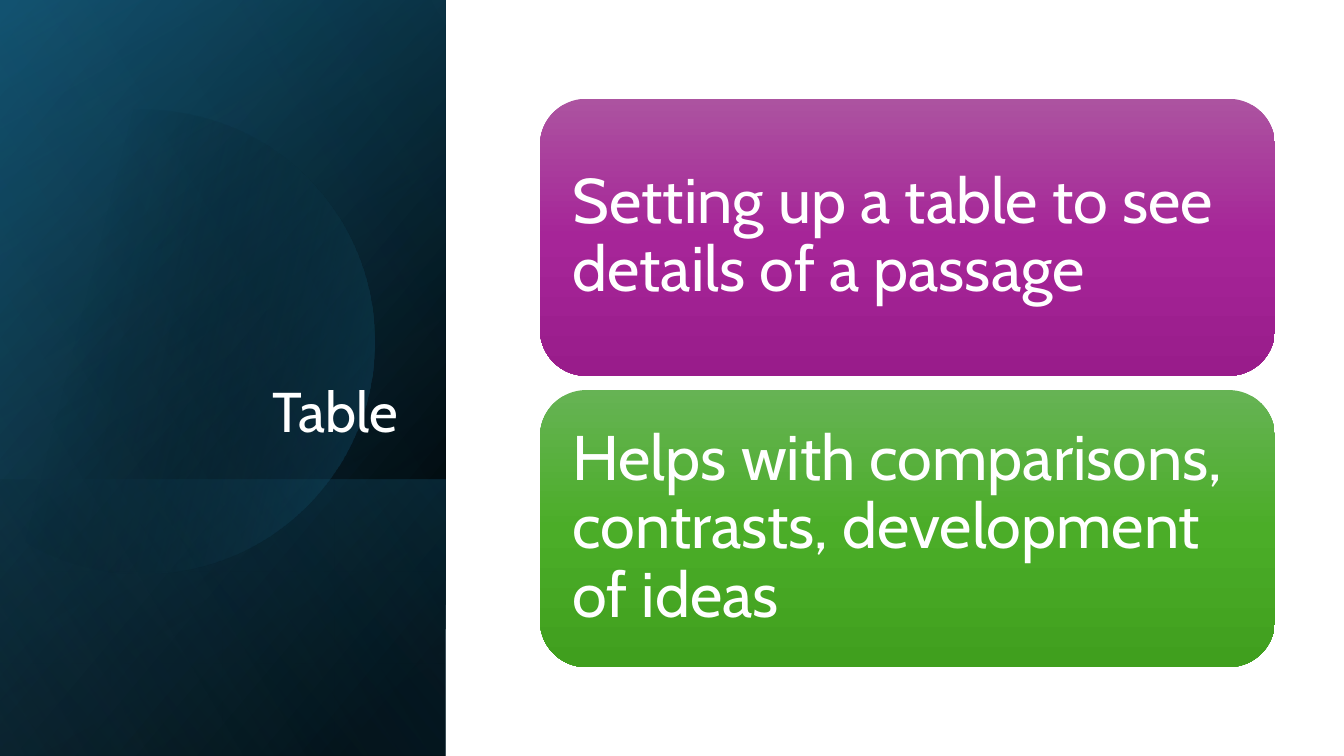
import math

import pptx
import pptx.dml.color
import pptx.enum.shapes
import pptx.enum.text
import pptx.oxml
import pptx.oxml.ns
import pptx.util

Cm = pptx.util.Cm
RGB = pptx.dml.color.RGBColor
SHAPES = pptx.enum.shapes.MSO_SHAPE
ANCHOR = pptx.enum.text.MSO_ANCHOR
ALIGN = pptx.enum.text.PP_ALIGN

BLACK = RGB(0x00, 0x00, 0x00)
WHITE = RGB(0xFF, 0xFF, 0xFF)
DEEP_BLUE = RGB(0x10, 0x48, 0x62)
TEAL = RGB(0x15, 0x60, 0x82)
SKY = RGB(0x46, 0xB1, 0xE1)
PURPLES = (RGB(0xAC, 0x53, 0xA0), RGB(0xA6, 0x25, 0x98), RGB(0x99, 0x1C, 0x8B))
GREENS = (RGB(0x66, 0xB3, 0x54), RGB(0x4B, 0xAD, 0x28), RGB(0x40, 0x9F, 0x1E))
FONT = "Cabin"

SLIDE_WIDTH, SLIDE_HEIGHT = 33.87, 19.05
PANEL = (0, 0, 11.23, SLIDE_HEIGHT)
CARDS_AREA = (13.61, 2.49, 18.52, 14.32)
CARDS = [
    ("Setting up a table to see details of a passage", PURPLES),
    ("Helps with comparisons, contrasts, development of ideas", GREENS),
]


def paint_gradient(shape, stops, angle):
    """Fill with (position %, colour, opacity %) stops; no outline or shadow."""
    shape.shadow.inherit = False
    shape.line.fill.background()
    shape.fill.background()
    stop_xml = "".join(
        f'<a:gs pos="{position * 1000}"><a:srgbClr val="{colour}">'
        f'<a:alpha val="{opacity * 1000}"/></a:srgbClr></a:gs>'
        for position, colour, opacity in stops
    )
    gradient = pptx.oxml.parse_xml(
        f'<a:gradFill {pptx.oxml.ns.nsdecls("a")} rotWithShape="1">'
        f'<a:gsLst>{stop_xml}</a:gsLst>'
        f'<a:lin ang="{angle * 60000}" scaled="0"/></a:gradFill>'
    )
    properties = shape.element.spPr
    properties.replace(properties.find(pptx.oxml.ns.qn("a:noFill")), gradient)


def write_text(shape, text, size, align, anchor):
    frame = shape.text_frame
    frame.word_wrap = True
    frame.vertical_anchor = anchor
    paragraph = frame.paragraphs[0]
    paragraph.text = text
    paragraph.alignment = align
    paragraph.line_spacing = 0.9
    paragraph.font.name = FONT
    paragraph.font.size = pptx.util.Pt(size)
    paragraph.font.color.rgb = WHITE


def add_turned_layer(slide, box, stops, angle):
    """Cover the box with a mirrored rectangle turned by a quarter."""
    left, top, width, height = box
    shift = (height - width) / 2
    layer = slide.shapes.add_shape(
        SHAPES.RECTANGLE, Cm(left - shift), Cm(top + shift), Cm(height), Cm(width)
    )
    layer.rotation = 90
    layer.element.spPr.find(pptx.oxml.ns.qn("a:xfrm")).set("flipH", "1")
    paint_gradient(layer, stops, angle)


def add_cut_disc(slide, box):
    """Draw a disc whose left side is cut off just beyond the box edge."""
    left, top, _, _ = box
    centre_x, centre_y, radius, cut = left + 3.6, top + 8.61, 5.84, left - 0.38
    limit = math.acos((cut - centre_x) / radius)
    steps = 120
    angles = [limit * (2 * step / steps - 1) for step in range(steps + 1)]
    rim = [
        (Cm(centre_x + radius * math.cos(a)), Cm(centre_y + radius * math.sin(a)))
        for a in angles
    ]
    builder = slide.shapes.build_freeform(*rim[0])
    builder.add_line_segments(rim[1:], close=True)
    disc = builder.convert_to_shape()
    paint_gradient(disc, [(29, BLACK, 0), (100, TEAL, 43)], 14)


def add_title_panel(slide, box, title):
    left, top, width, height = box
    lower_height = 6.96
    lower_part = (left, top + height - lower_height, width, lower_height)
    add_turned_layer(slide, box, [(8, BLACK, 100), (100, DEEP_BLUE, 100)], 50)
    add_turned_layer(slide, box, [(0, BLACK, 0), (99, TEAL, 46)], 30)
    add_turned_layer(slide, lower_part, [(2, TEAL, 29), (100, BLACK, 30)], 130)
    add_cut_disc(slide, box)
    add_turned_layer(slide, box, [(0, BLACK, 0), (99, SKY, 11)], 120)
    heading = slide.shapes.add_textbox(
        Cm(left + 1.63), Cm(top + 4.67), Cm(8.66), Cm(6.65)
    )
    write_text(heading, title, 40, ALIGN.RIGHT, ANCHOR.BOTTOM)


def add_cards(slide, box, cards):
    left, top, width, height = box
    gap, inset = 0.36, Cm(0.48)
    card_height = (height - gap * (len(cards) - 1)) / len(cards)
    for index, (statement, colours) in enumerate(cards):
        card = slide.shapes.add_shape(
            SHAPES.ROUNDED_RECTANGLE,
            Cm(left), Cm(top + index * (card_height + gap)),
            Cm(width), Cm(card_height),
        )
        stops = [(50 * i, colour, 100) for i, colour in enumerate(colours)]
        paint_gradient(card, stops, 90)
        frame = card.text_frame
        frame.margin_left = frame.margin_right = inset
        frame.margin_top = frame.margin_bottom = inset
        write_text(card, statement, 45, ALIGN.LEFT, ANCHOR.MIDDLE)


def main():
    presentation = pptx.Presentation()
    presentation.slide_width = Cm(SLIDE_WIDTH)
    presentation.slide_height = Cm(SLIDE_HEIGHT)
    slide = presentation.slides.add_slide(presentation.slide_layouts[6])
    add_title_panel(slide, PANEL, "Table")
    add_cards(slide, CARDS_AREA, CARDS)
    presentation.save("out.pptx")


if __name__ == "__main__":
    main()
